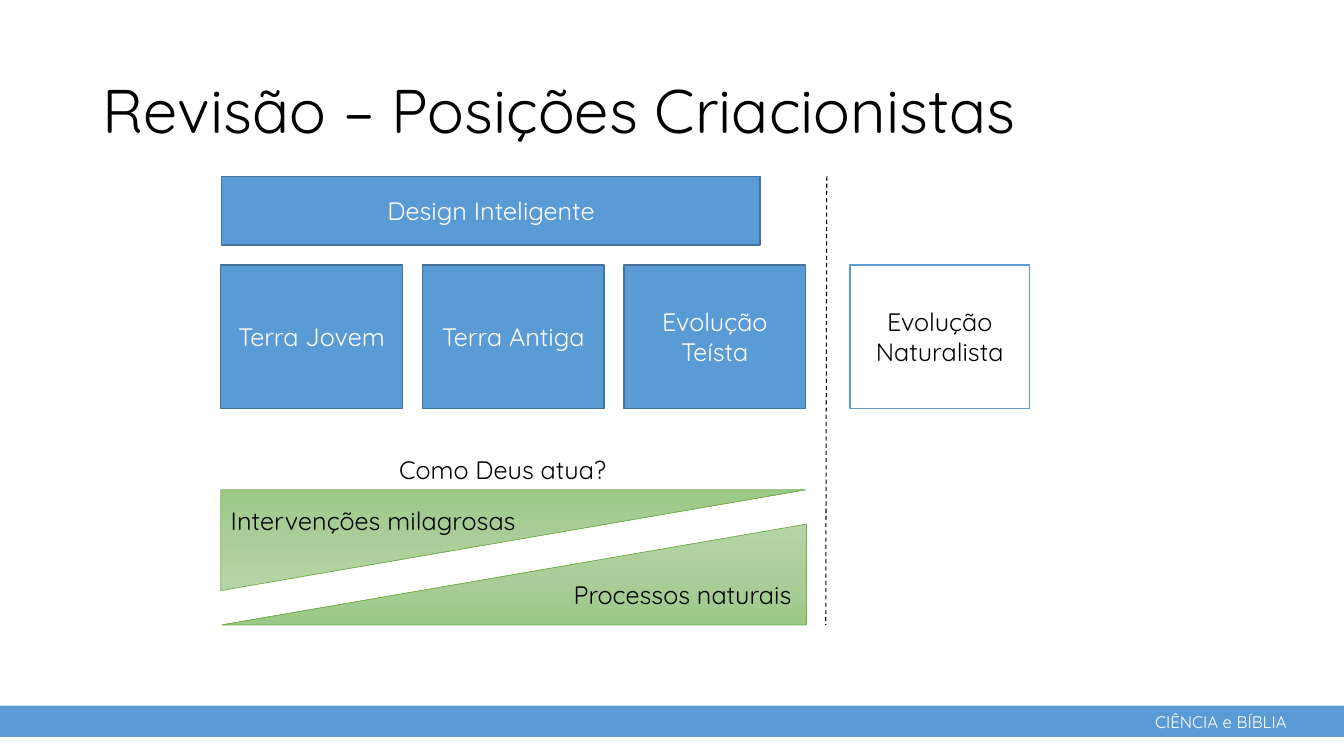
import copy
from dataclasses import dataclass

import pptx
import pptx.dml.color
import pptx.enum.dml
import pptx.enum.shapes
import pptx.enum.text
import pptx.oxml
import pptx.oxml.ns
import pptx.util

PX = 9144  # 100 px to the inch
FONT = "Quicksand"
COLORS = {
    "blue": "5B9BD5", "edge": "43739E", "white": "FFFFFF", "black": "000000",
    "green": "70AD47", "light": "B5D5A7", "mid": "AACE9A", "dark": "9CC987",
}
SHAPE = pptx.enum.shapes.MSO_SHAPE
ALIGN = pptx.enum.text.PP_ALIGN
ANCHOR = pptx.enum.text.MSO_ANCHOR


@dataclass
class Box:
    text: str
    left: int
    top: int
    width: int
    height: int
    fill: str = "blue"
    line: str = "edge"
    color: str = "white"


@dataclass
class Label:
    text: str
    left: int
    top: int
    width: int
    height: int = 40
    size: int = 18
    color: str = "black"


@dataclass
class Wedge:
    left: int
    top: int
    flip: str


BOX_TOP, BOX_W, BOX_H, BOX_STEP = 263, 180, 142, 200
POSITIONS = ["Terra Jovem", "Terra Antiga", "Evolução Teísta"]
BOXES = [
    Box(text, 219 + i * BOX_STEP, BOX_TOP, BOX_W, BOX_H)
    for i, text in enumerate(POSITIONS)
] + [
    Box("Evolução Naturalista", 843, BOX_TOP, 178, BOX_H, "white", "blue", "black"),
    Box("Design Inteligente", 220, 175, 534, 68),
]
WEDGES = [Wedge(219, 486, "flipV"), Wedge(220, 520, "flipH")]
LABELS = [
    Label("CIÊNCIA e BÍBLIA", 1136, 701, 157, 30, 12, "white"),
    Label("Como Deus atua?", 386, 446, 245),
    Label("Intervenções milagrosas", 219, 496, 315),
    Label("Processos naturais", 559, 570, 241),
]


def px(n: int) -> pptx.util.Emu:
    return pptx.util.Emu(n * PX)


def rgb(name: str) -> pptx.dml.color.RGBColor:
    return pptx.dml.color.RGBColor.from_string(COLORS[name])


def add_run(p, text: str, size: int, color: str) -> None:
    r = p.add_run()
    r.text = text
    r.font.name = FONT
    r.font.size = pptx.util.Pt(size)
    r.font.color.rgb = rgb(color)


def add_rect(s, left: int, top: int, width: int, height: int, fill: str):
    sp = s.shapes.add_shape(SHAPE.RECTANGLE, px(left), px(top), px(width), px(height))
    sp.shadow.inherit = False
    sp.fill.solid()
    sp.fill.fore_color.rgb = rgb(fill)
    return sp


def add_box(s, box: Box) -> None:
    sp = add_rect(s, box.left, box.top, box.width, box.height, box.fill)
    sp.line.color.rgb = rgb(box.line)
    sp.line.width = pptx.util.Pt(1)
    tf = sp.text_frame
    tf.word_wrap = True
    tf.vertical_anchor = ANCHOR.MIDDLE
    p = tf.paragraphs[0]
    p.alignment = ALIGN.CENTER
    add_run(p, box.text, 18, box.color)


def add_wedge(s, wedge: Wedge) -> None:
    """Add a flipped right triangle with a three-stop vertical gradient."""
    sp = s.shapes.add_shape(
        SHAPE.RIGHT_TRIANGLE, px(wedge.left), px(wedge.top), px(580), px(100))
    sp.shadow.inherit = False
    sp.line.color.rgb = rgb("green")
    sp.line.width = pptx.util.Pt(0.5)
    sp.fill.gradient()
    sp.fill.gradient_angle = 270
    qn = pptx.oxml.ns.qn
    stops = next(sp.element.iter(qn("a:gsLst")))
    stops.insert(1, copy.deepcopy(stops[0]))
    for i, (stop, name) in enumerate(zip(sp.fill.gradient_stops, ["light", "mid", "dark"])):
        stop.position = i / 2
        stop.color.rgb = rgb(name)
    sp.element.spPr.find(qn("a:xfrm")).set(wedge.flip, "1")


def add_label(s, label: Label) -> None:
    sp = s.shapes.add_textbox(
        px(label.left), px(label.top), px(label.width), px(label.height))
    tf = sp.text_frame
    tf.word_wrap = False
    tf.auto_size = pptx.enum.text.MSO_AUTO_SIZE.SHAPE_TO_FIT_TEXT
    add_run(tf.paragraphs[0], label.text, label.size, label.color)


def set_title(s, text: str) -> None:
    sp = s.shapes.title
    sp.left, sp.top, sp.width, sp.height = px(92), px(40), px(1150), px(145)
    tf = sp.text_frame
    tf.word_wrap = True
    tf.vertical_anchor = ANCHOR.MIDDLE
    p = tf.paragraphs[0]
    p.alignment = ALIGN.LEFT
    p.line_spacing = 0.9
    add_run(p, text, 44, "black")


def add_divider(s) -> None:
    cx = s.shapes.add_connector(
        pptx.enum.shapes.MSO_CONNECTOR.STRAIGHT, px(820), px(175), px(819), px(620))
    cx.line.color.rgb = rgb("black")
    cx.line.width = pptx.util.Pt(0.75)
    cx.line.dash_style = pptx.enum.dml.MSO_LINE.DASH
    cx.element.spPr.append(pptx.oxml.parse_xml(
        f"<a:effectLst {pptx.oxml.ns.nsdecls('a')}/>"))


def main() -> None:
    prs = pptx.Presentation()
    prs.slide_width, prs.slide_height = pptx.util.Inches(13.33), pptx.util.Inches(7.5)
    s = prs.slides.add_slide(prs.slide_layouts.get_by_name("Title Only"))
    set_title(s, "Revisão – Posições Criacionistas")
    add_rect(s, 0, 700, 1333, 31, "blue").line.fill.background()
    for box in BOXES:
        add_box(s, box)
    for wedge in WEDGES:
        add_wedge(s, wedge)
    for label in LABELS:
        add_label(s, label)
    add_divider(s)
    prs.save("out.pptx")


if __name__ == "__main__":
    main()
